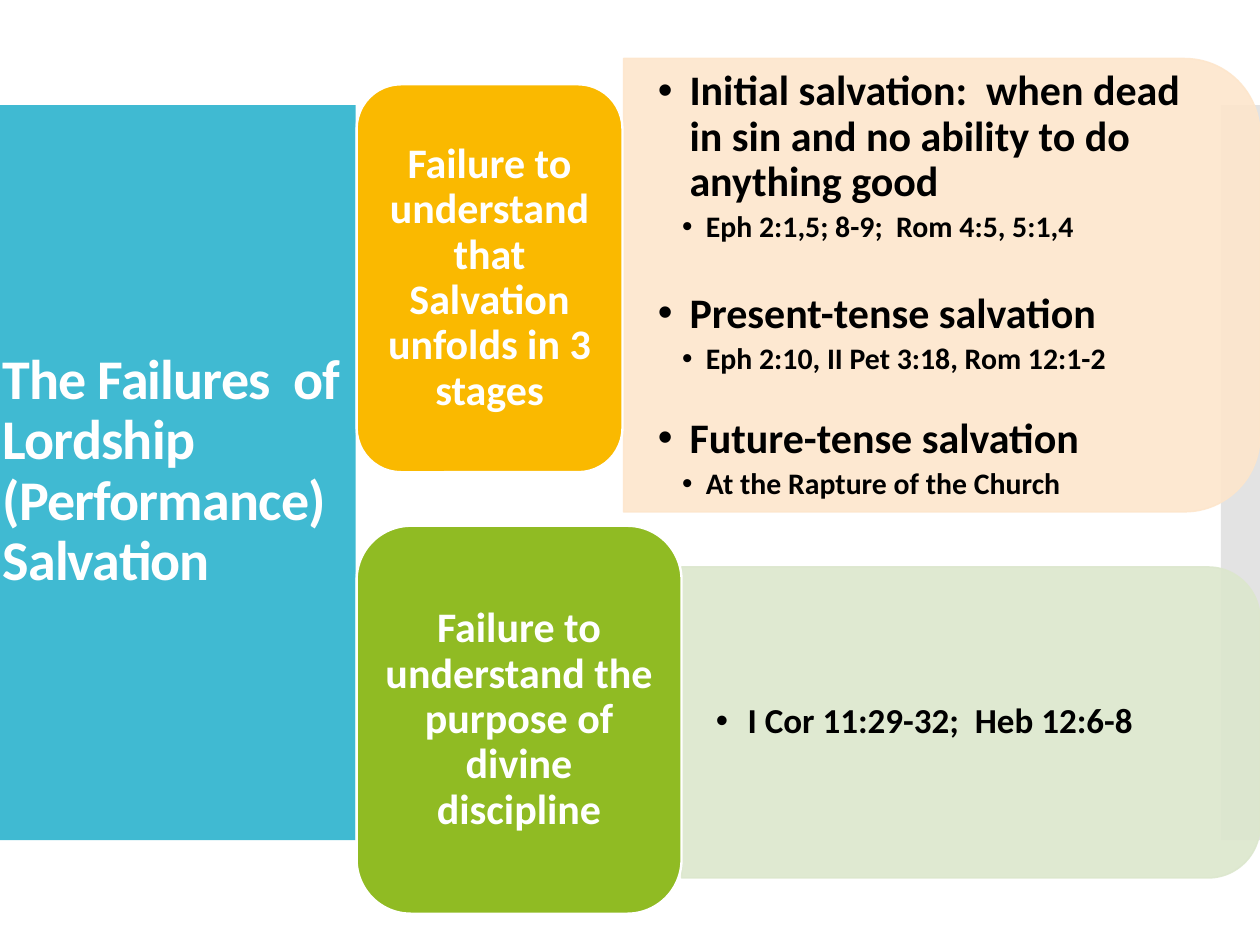
from lxml import etree
from pptx import Presentation
from pptx.dml.color import RGBColor
from pptx.enum.shapes import MSO_SHAPE
from pptx.enum.text import MSO_ANCHOR, MSO_AUTO_SIZE, PP_ALIGN
from pptx.oxml.ns import qn
from pptx.util import Cm, Pt

RECTANGLE = MSO_SHAPE.RECTANGLE
ROUNDED = MSO_SHAPE.ROUNDED_RECTANGLE
ROUNDED_TOP = MSO_SHAPE.ROUND_2_SAME_RECTANGLE
MIDDLE = MSO_ANCHOR.MIDDLE
LEFT, CENTER = PP_ALIGN.LEFT, PP_ALIGN.CENTER
NO_AUTOFIT = MSO_AUTO_SIZE.NONE

FONT = "Calibri"
WHITE, BLACK = "FFFFFF", "000000"
TITLE_ONLY = 5
CORNER_INSET = 0.05  # share of a panel's height kept free at its round corners

# Each point: text, level, size in points, space before in points
STAGES = [
    ("Initial salvation:  when dead in sin and no ability to do anything good", 1, 24, 0),
    ("Eph 2:1,5; 8-9;  Rom 4:5, 5:1,4", 2, 17, 0),
    ("Present-tense salvation", 1, 24, 25),
    ("Eph 2:10, II Pet 3:18, Rom 12:1-2", 2, 17, 0),
    ("Future-tense salvation", 1, 24, 21),
    ("At the Rapture of the Church", 2, 17, 0),
]
DISCIPLINE = [("I Cor 11:29-32;  Heb 12:6-8", 1, 20, 0)]
INDENTS = {1: (0.64, -0.64), 2: (0.97, -0.48)}  # margin and first line, cm


def paint(color_format, color):
    color_format.rgb = RGBColor.from_string(color)


def set_opacity(fill_parent, percent):
    """Make every solid colour below the given XML element see-through."""
    for color in fill_parent.iter(qn("a:srgbClr")):
        etree.SubElement(color, qn("a:alpha"), val=str(percent * 1000))


def add_block(slide, kind, left, top, width, height, fill, line=None, line_width=0):
    shape = slide.shapes.add_shape(kind, Cm(left), Cm(top), Cm(width), Cm(height))
    shape.shadow.inherit = False
    shape.fill.solid()
    paint(shape.fill.fore_color, fill)
    if line:
        paint(shape.line.color, line)
        shape.line.width = Pt(line_width)
    else:
        shape.line.fill.background()
    return shape


def format_paragraph(paragraph, size, color, alignment=LEFT):
    paragraph.alignment = alignment
    paragraph.line_spacing = 0.9
    for run in paragraph.runs:
        run.font.name = FONT
        run.font.size = Pt(size)
        run.font.bold = True
        paint(run.font.color, color)


def add_bullet(paragraph, level):
    margin, first_line = INDENTS[level]
    properties = paragraph._p.get_or_add_pPr()
    properties.set("marL", str(Cm(margin)))
    properties.set("indent", str(Cm(first_line)))
    etree.SubElement(properties, qn("a:buFont"), typeface="Arial")
    etree.SubElement(properties, qn("a:buChar"), char="•")


def add_side_bands(slide):
    """Draw the two bands behind the title."""
    bands = [(0, 7.17, "40BAD2", 100), (24.61, 0.79, "C8C8C8", 50)]
    for left, width, color, opacity in bands:
        band = add_block(slide, RECTANGLE, left, 2.12, width, 14.82, color)
        set_opacity(band.element.spPr, opacity)
        slide.shapes.title.element.addprevious(band.element)


def set_title(slide, text):
    title = slide.shapes.title
    title.left, title.top = Cm(-0.2), Cm(4.73)
    title.width, title.height = Cm(7.42), Cm(9.57)
    text_frame = title.text_frame
    text_frame.text = text
    text_frame.word_wrap = True
    text_frame.auto_size = NO_AUTOFIT
    text_frame.vertical_anchor = MIDDLE
    paragraph = text_frame.paragraphs[0]
    format_paragraph(paragraph, 32, WHITE)
    paragraph.runs[0].font._element.set("spc", "-50")


def add_card(slide, top, width, color, text):
    card = add_block(slide, ROUNDED, 7.19, top, width, 7.82, color, WHITE, 1.35)
    text_frame = card.text_frame
    text_frame.text = text
    text_frame.word_wrap = True
    text_frame.vertical_anchor = MIDDLE
    format_paragraph(text_frame.paragraphs[0], 24, WHITE, CENTER)


def add_panel(slide, left, top, width, height, color):
    """Draw a panel with round right corners: a top-rounded shape turned by 90 degrees."""
    shift = (width - height) / 2
    panel = add_block(slide, ROUNDED_TOP, left + shift, top - shift, height, width,
                      color, color, 0.85)
    panel.rotation = 90
    set_opacity(panel.element.spPr, 90)


def add_points(slide, left, top, width, height, points):
    """Write the bullet points inside the panel with the same frame."""
    inset = CORNER_INSET * height
    box = slide.shapes.add_textbox(Cm(left), Cm(top + inset), Cm(width - inset),
                                   Cm(height - 2 * inset))
    text_frame = box.text_frame
    text_frame.word_wrap = True
    text_frame.vertical_anchor = MIDDLE
    text_frame.margin_left = text_frame.margin_right = Cm(0.69)
    text_frame.margin_top = text_frame.margin_bottom = Cm(0.36)
    text_frame.text = "\n".join(point[0] for point in points)
    for paragraph, (_, level, size, before) in zip(text_frame.paragraphs, points):
        paragraph.level = level
        format_paragraph(paragraph, size, BLACK)
        paragraph.space_before = Pt(before)
        paragraph.space_after = Pt(0.15 * size)
        add_bullet(paragraph, level)


def main():
    presentation = Presentation()
    presentation.slide_width, presentation.slide_height = Cm(25.4), Cm(19.05)
    slide = presentation.slides.add_slide(presentation.slide_layouts[TITLE_ONLY])

    add_side_bands(slide)
    set_title(slide, "The Failures  of Lordship (Performance) Salvation")

    rows = [
        ((12.57, 1.18, 12.83, 9.14), "FDE6CC", STAGES, 1.7, 5.36, "FAB900",
         "Failure to understand that Salvation unfolds in 3 stages"),
        ((13.74, 11.43, 11.66, 6.27), "DCE7CD", DISCIPLINE, 10.6, 6.55, "90BB23",
         "Failure to understand the purpose of divine discipline"),
    ]
    for frame, panel_color, points, card_top, card_width, card_color, failure in rows:
        add_panel(slide, *frame, panel_color)
        add_points(slide, *frame, points)
        add_card(slide, card_top, card_width, card_color, failure)

    presentation.save("out.pptx")


if __name__ == "__main__":
    main()
